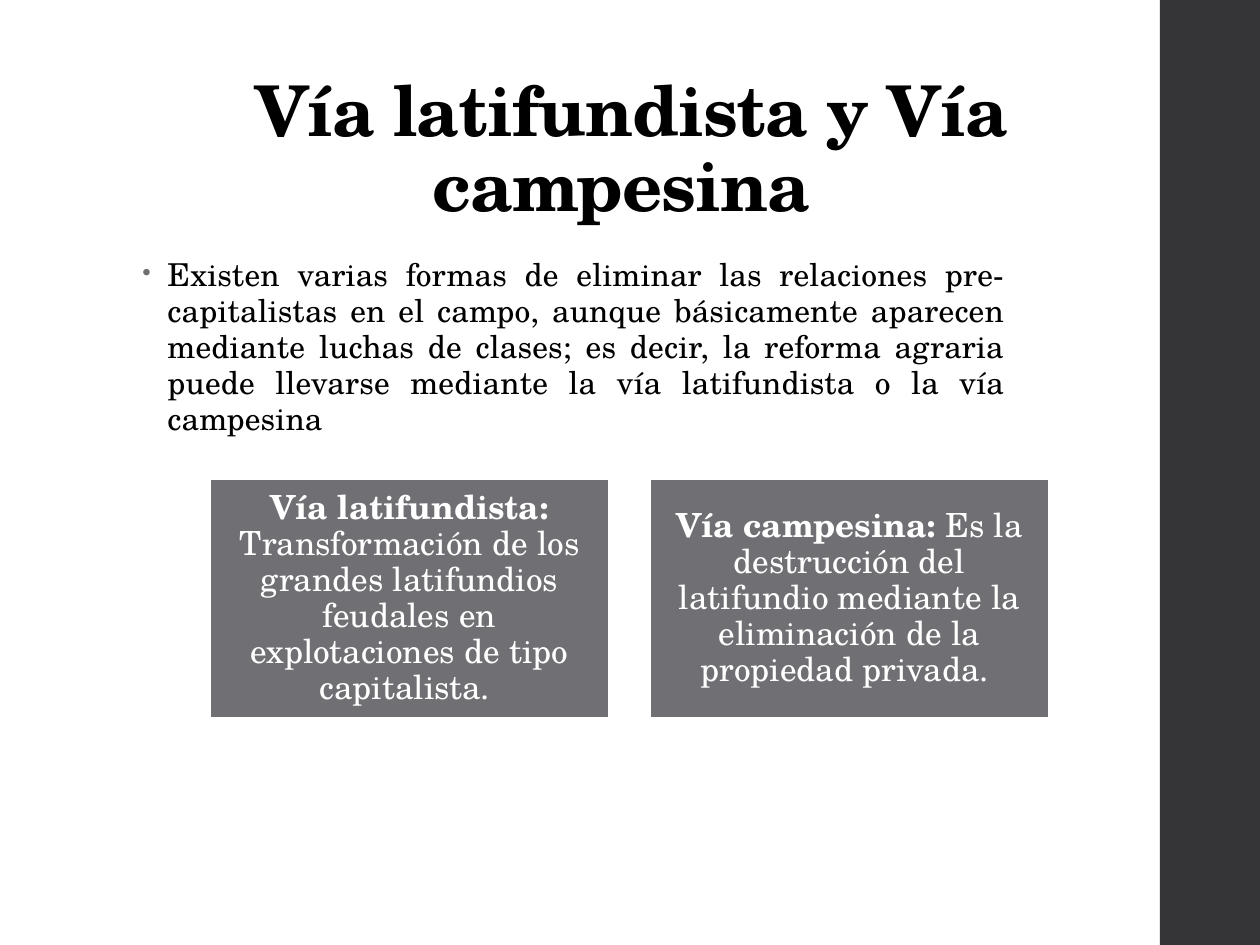
from lxml import etree
from pptx import Presentation
from pptx.dml.color import RGBColor
from pptx.enum.shapes import MSO_SHAPE
from pptx.enum.text import MSO_ANCHOR, PP_ALIGN
from pptx.oxml.ns import qn
from pptx.util import Emu, Pt

RECTANGLE = MSO_SHAPE.RECTANGLE
TOP, MIDDLE, BOTTOM = MSO_ANCHOR.TOP, MSO_ANCHOR.MIDDLE, MSO_ANCHOR.BOTTOM
CENTER, JUSTIFY = PP_ALIGN.CENTER, PP_ALIGN.JUSTIFY

BLACK = RGBColor(0x00, 0x00, 0x00)
WHITE = RGBColor(0xFF, 0xFF, 0xFF)
GRAY = RGBColor(0x6F, 0x6F, 0x74)
CHARCOAL = RGBColor(0x35, 0x35, 0x37)
FONT = "TeX Gyre Schola"

TITLE = "Vía latifundista y Vía campesina "
BODY = (
    "Existen varias formas de eliminar las relaciones pre-capitalistas en el campo, "
    "aunque básicamente aparecen mediante luchas de clases; es decir, la reforma agraria "
    "puede llevarse mediante la vía latifundista o la vía campesina "
)
CARDS = [
    ("Vía latifundista: ",
     "Transformación de los grandes latifundios feudales en explotaciones de tipo capitalista. "),
    ("Vía campesina: ",
     "Es la destrucción del latifundio mediante la eliminación de la propiedad privada. "),
]

PX_PER_INCH = 126
PAGE_SIZE = (1260, 945)
SIDEBAR_BOX = (1160, 0, 100, 945)
TITLE_BOX = (130, 50, 1002, 183)
BODY_BOX = (130, 252, 888, 194)
CARD_LEFT, CARD_TOP, CARD_WIDTH, CARD_HEIGHT = 210, 479, 399, 239
CARD_GAP = 41
CARD_INSET = 10
BULLET_INDENT = 25


def px(length):
    return Emu(round(length * 914400 / PX_PER_INCH))


def add_rectangle(page, box, fill):
    shape = page.shapes.add_shape(RECTANGLE, *map(px, box))
    shape.shadow.inherit = False
    shape.fill.solid()
    shape.fill.fore_color.rgb = fill
    shape.line.fill.background()
    return shape


def write_paragraph(shape, spans, size, color, anchor, align, line_spacing, tracking=0):
    """Fill the shape with one paragraph of (text, bold) spans; tracking is in 1/100 pt."""
    frame = shape.text_frame
    frame.word_wrap = True
    frame.vertical_anchor = anchor
    para = frame.paragraphs[0]
    para.alignment = align
    para.line_spacing = line_spacing
    para.font.name = FONT
    para.font.size = Pt(size)
    para.font.color.rgb = color
    for text, bold in spans:
        span = para.add_run()
        span.text = text
        span.font.bold = bold
        if tracking:
            span.font._element.set("spc", str(tracking))
    return para


def add_bullet(para, color):
    properties = para._p.get_or_add_pPr()
    properties.set("marL", str(px(BULLET_INDENT)))
    properties.set("indent", str(-px(BULLET_INDENT)))
    bullet_color = etree.Element(qn("a:buClr"))
    etree.SubElement(bullet_color, qn("a:srgbClr"), val=str(color))
    bullet_size = etree.Element(qn("a:buSzPct"), val="80000")
    bullet_char = etree.Element(qn("a:buChar"), char="•")
    defaults = properties.find(qn("a:defRPr"))
    for element in (bullet_color, bullet_size, bullet_char):
        defaults.addprevious(element)


def add_card(page, index, heading, text):
    left = CARD_LEFT + index * (CARD_WIDTH + CARD_GAP)
    card = add_rectangle(page, (left, CARD_TOP, CARD_WIDTH, CARD_HEIGHT), GRAY)
    card.line.color.rgb = WHITE
    card.line.width = Pt(1.1)
    frame = card.text_frame
    frame.margin_left = frame.margin_right = px(CARD_INSET)
    frame.margin_top = frame.margin_bottom = px(CARD_INSET)
    write_paragraph(card, [(heading, True), (text, False)], 19, WHITE, MIDDLE, CENTER, 0.9)


def main():
    deck = Presentation()
    deck.slide_width, deck.slide_height = map(px, PAGE_SIZE)
    page = deck.slides.add_slide(deck.slide_layouts[6])

    add_rectangle(page, SIDEBAR_BOX, CHARCOAL)
    title = page.shapes.add_textbox(*map(px, TITLE_BOX))
    write_paragraph(title, [(TITLE, True)], 40, BLACK, BOTTOM, CENTER, 0.9, tracking=-50)
    body = page.shapes.add_textbox(*map(px, BODY_BOX))
    para = write_paragraph(body, [(BODY, False)], 18, BLACK, TOP, JUSTIFY, 0.95, tracking=10)
    add_bullet(para, GRAY)
    for index, (heading, text) in enumerate(CARDS):
        add_card(page, index, heading, text)

    deck.save("out.pptx")


if __name__ == "__main__":
    main()
